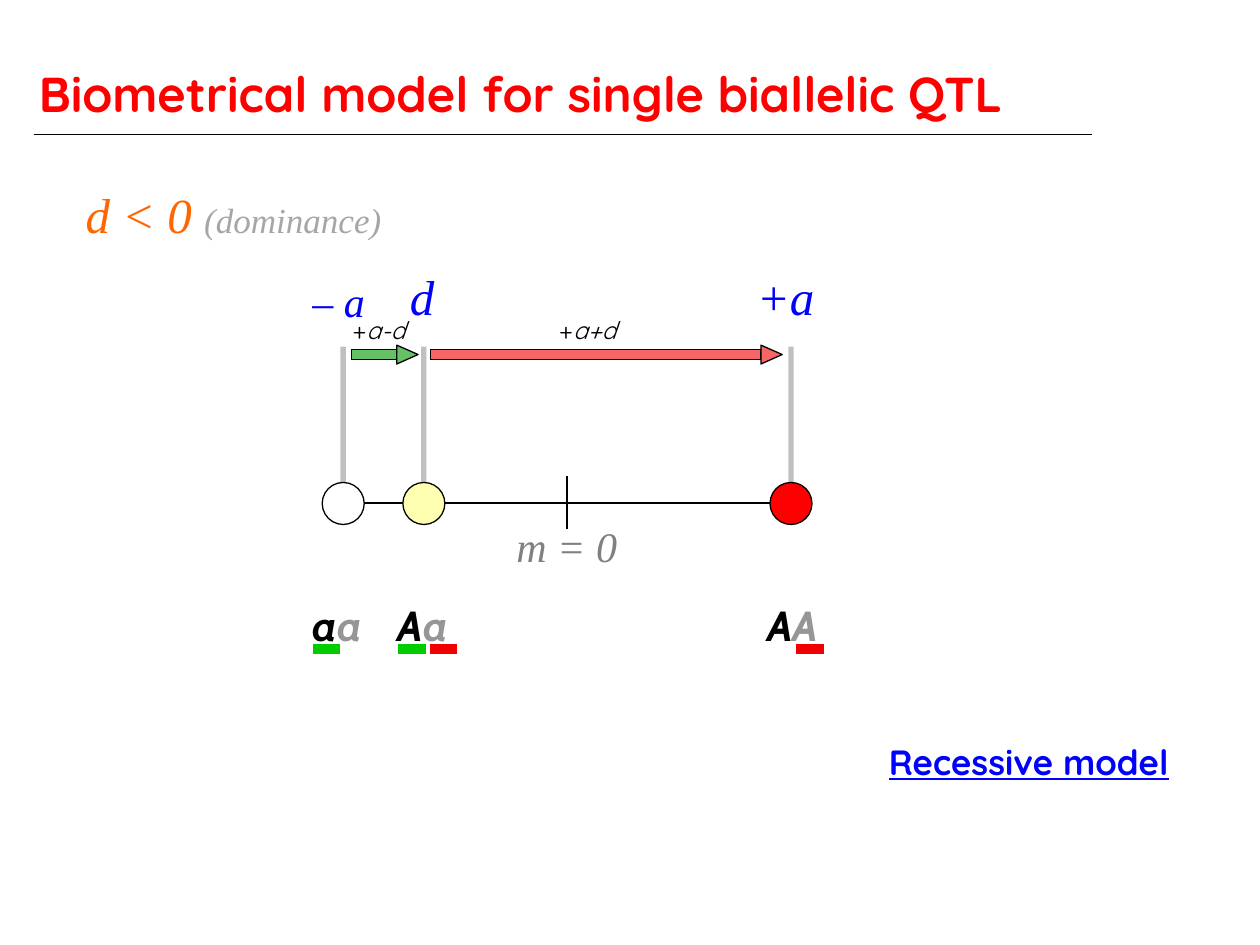
from lxml.etree import SubElement
from pptx import Presentation
from pptx.dml.color import RGBColor
from pptx.enum.shapes import MSO_CONNECTOR, MSO_SHAPE
from pptx.enum.text import MSO_ANCHOR, PP_ALIGN
from pptx.oxml.ns import qn
from pptx.util import Pt

BLACK = RGBColor(0x00, 0x00, 0x00)
WHITE = RGBColor(0xFF, 0xFF, 0xFF)
RED = RGBColor(0xFF, 0x00, 0x00)
BLUE = RGBColor(0x00, 0x00, 0xFF)
ORANGE = RGBColor(0xFF, 0x66, 0x00)
YELLOW = RGBColor(0xFF, 0xFF, 0xB1)
GRAY = RGBColor(0x80, 0x80, 0x80)
MID_GRAY = RGBColor(0x96, 0x96, 0x96)
LIGHT_GRAY = RGBColor(0xA6, 0xA6, 0xA6)
DARK_GREEN = RGBColor(0x00, 0x99, 0x00)
GREEN = RGBColor(0x00, 0xCC, 0x00)
DARK_RED = RGBColor(0xF0, 0x00, 0x00)

HEADING, MATH, ALLELE = "Quicksand", "Times New Roman", "Cabin"

# Content: (text, format) spans; boxes are left, top, width, height in points
TITLE = ("Biometrical model for single biallelic QTL",
         dict(size=28, font=HEADING, color=RED, bold=True))
LINK = ("Recessive model",
        dict(size=20, font=HEADING, color=BLUE, bold=True, underline=True))
CONDITION = [
    ("d < 0 ", dict(size=28, font=MATH, color=ORANGE, italic=True)),
    ("(dominance)", dict(size=20, font=MATH, color=LIGHT_GRAY, italic=True)),
]
VALUES = [  # text, size, color, box, alignment
    ("m = 0", 24, GRAY, (288, 293.8, 72, 36), PP_ALIGN.LEFT),
    ("d", 28, BLUE, (226.8, 149, 28.8, 41), PP_ALIGN.CENTER),
    ("+a", 28, BLUE, (425.5, 149, 47.5, 41), PP_ALIGN.LEFT),
    ("– a", 24, BLUE, (171.4, 154.1, 50.4, 36), PP_ALIGN.LEFT),
]
GENOTYPES = [  # alleles, text left, text width, circle centre, fill
    ("aa", 162.7, 59.8, 196.1, WHITE),
    ("Aa", 205.2, 72.7, 242.2, YELLOW),
    ("AA", 406.1, 93.6, 452, RED),
]
ALLELE_MARKS = [(178.6, GREEN), (227.5, GREEN), (245.5, DARK_RED), (455, DARK_RED)]
EFFECTS = [  # label, label left, label width, bar left, bar width, color
    ("a-d ", 190.1, 56.9, 201, 25.7, DARK_GREEN),
    ("a+d", 309.6, 52.6, 246.2, 188.6, DARK_RED),
]

AXIS_Y, POST_TOP, ARROW_Y, MARK_Y = 287.4, 198, 202.6, 370.8
CIRCLE, MARK, BAR = 24, 15.8, 5.8
HEAD_WIDTH, HEAD_LENGTH = 10.8, 12.2

deck = Presentation()
deck.slide_width, deck.slide_height = Pt(720), Pt(540)
page = deck.slides.add_slide(deck.slide_layouts[6])


def set_alpha(shape_format, percent):
    for color in shape_format.iter(qn("a:srgbClr")):
        SubElement(color, qn("a:alpha"), val=str(percent * 1000))


def add_span(para, text, size=14, font=HEADING, color=BLACK,
             bold=False, italic=False, underline=False):
    span = para.add_run()
    span.text = text
    span.font.size, span.font.name = Pt(size), font
    span.font.color.rgb = color
    span.font.bold, span.font.italic = bold, italic
    span.font.underline = underline


def add_text(spans, place, align=PP_ALIGN.LEFT, wrap=True, line_spacing=None):
    box = page.shapes.add_textbox(*map(Pt, place))
    frame = box.text_frame
    frame.word_wrap, frame.vertical_anchor = wrap, MSO_ANCHOR.TOP
    para = frame.paragraphs[0]
    para.alignment = align
    if line_spacing:
        para.line_spacing = line_spacing
    for text, style in spans:
        add_span(para, text, **style)


def add_line(x1, y1, x2, y2, color=BLACK, width=0.75, alpha=None):
    line = page.shapes.add_connector(MSO_CONNECTOR.STRAIGHT, *map(Pt, (x1, y1, x2, y2)))
    line.line.color.rgb, line.line.width = color, Pt(width)
    properties = line.line._get_or_add_ln().getparent()
    if alpha:
        set_alpha(properties, alpha)
    SubElement(properties, qn("a:effectLst"))


def add_shape(kind, center_x, center_y, width, height, fill, alpha=None, rotation=0):
    shape = page.shapes.add_shape(kind, *map(Pt, (
        center_x - width / 2, center_y - height / 2, width, height)))
    shape.rotation = rotation
    shape.shadow.inherit = False
    shape.fill.solid()
    shape.fill.fore_color.rgb = fill
    if alpha:
        set_alpha(shape.fill._xPr, alpha)
    shape.line.color.rgb, shape.line.width = BLACK, Pt(0.75)


# Title with rule
add_text([TITLE], (15.1, 15.8, 614.9, 57.6), line_spacing=1.5)
add_line(19.4, 77, 624.2, 77)

# Axis with its midpoint
add_line(190.8, AXIS_Y, 455.8, AXIS_Y)
add_line(324, 272.2, 324, 302.4)

# Condition and values
add_text(CONDITION, (41.8, 102.2, 185, 41), wrap=False)
for text, size, color, place, align in VALUES:
    style = dict(size=size, font=MATH, color=color, italic=True)
    add_text([(text, style)], place, align=align, wrap=False)

# Genotypes: label, post and circle
for alleles, left, width, center, fill in GENOTYPES:
    spans = [(allele, dict(size=24, font=ALLELE, color=color, bold=True, italic=True))
             for allele, color in zip(alleles, (BLACK, MID_GRAY))]
    add_text(spans, (left, 339.1, width, 25.2), align=PP_ALIGN.CENTER)
    add_line(center, POST_TOP, center, AXIS_Y, MID_GRAY, 3, alpha=60)
    add_shape(MSO_SHAPE.OVAL, center, AXIS_Y + 0.3, CIRCLE, CIRCLE, fill)

# Allele marks
for left, color in ALLELE_MARKS:
    add_line(left, MARK_Y, left + MARK, MARK_Y, color, 6)

# Effect arrows: bar, head and label
for label, label_left, label_width, left, length, color in EFFECTS:
    add_shape(MSO_SHAPE.RECTANGLE, left + length / 2, ARROW_Y, length, BAR, color, alpha=60)
    add_shape(MSO_SHAPE.ISOSCELES_TRIANGLE, left + length + HEAD_LENGTH / 2, ARROW_Y,
              HEAD_WIDTH, HEAD_LENGTH, color, alpha=60, rotation=90)
    add_text([("+", {}), (label, dict(italic=True))],
             (label_left, 176.4, label_width, 23.8), align=PP_ALIGN.CENTER)

# Model name
add_text([LINK], (491.8, 419.8, 192.2, 31.7), align=PP_ALIGN.CENTER)

deck.save("out.pptx")
